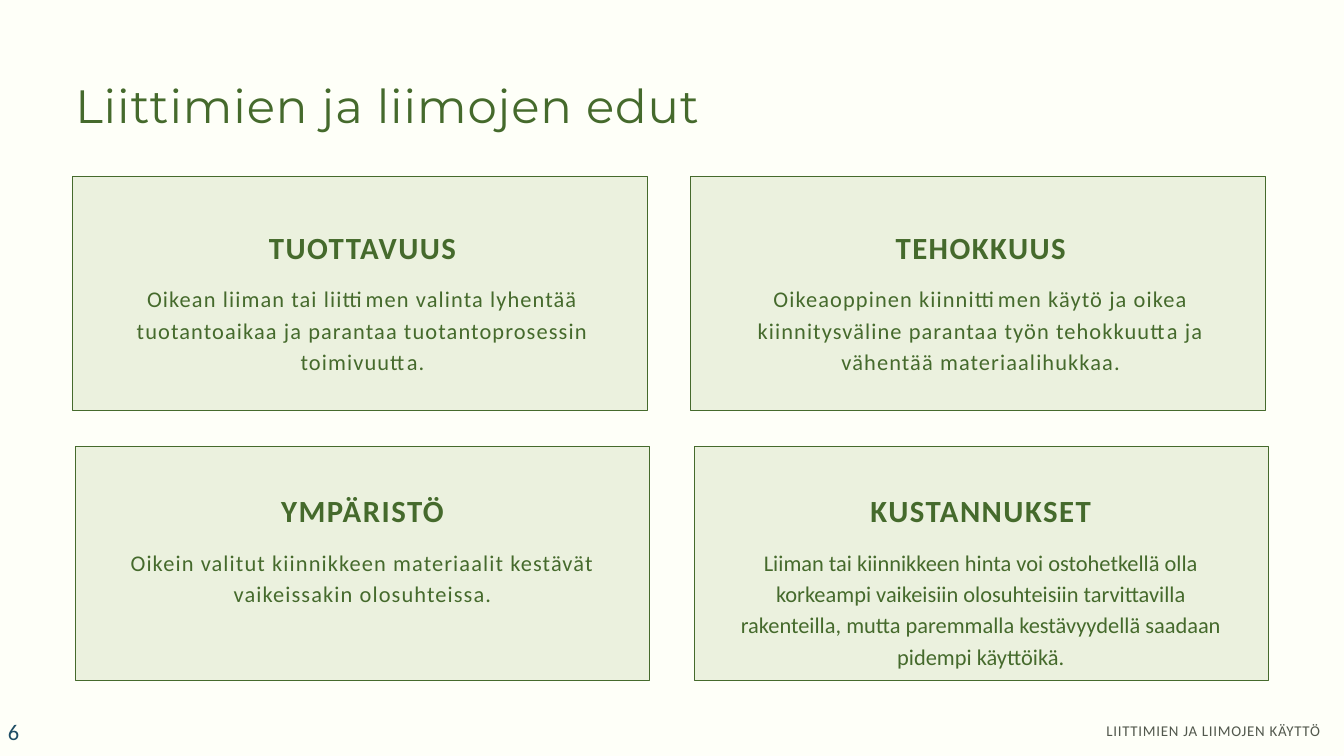
from pptx import Presentation
from pptx.dml.color import RGBColor
from pptx.enum.shapes import MSO_SHAPE
from pptx.enum.text import MSO_ANCHOR, MSO_AUTO_SIZE, PP_ALIGN
from pptx.util import Inches, Pt

LEFT, CENTER, RIGHT = PP_ALIGN.LEFT, PP_ALIGN.CENTER, PP_ALIGN.RIGHT
TOP, MIDDLE = MSO_ANCHOR.TOP, MSO_ANCHOR.MIDDLE
RECTANGLE = MSO_SHAPE.RECTANGLE
NO_AUTOFIT = MSO_AUTO_SIZE.NONE
TITLE_ONLY = 5
COLUMNS, ROWS = 200, 112.5

CARD_WIDTH, CARD_HEIGHT = 85.5, 34.8
TEXT_WIDTH = 73.9
TEXT_LEFT, TEXT_STEP = 17, 92
HEADING_HEIGHT, BODY_OFFSET, BODY_HEIGHT = 5.6, 8, 18.7

CARDS = [
    (0, 10.8, 26.2, 33.8, "TUOTTAVUUS", 1.2,
     "Oikean liiman tai liittimen valinta lyhentää tuotantoaikaa ja parantaa "
     "tuotantoprosessin toimivuutta."),
    (1, 102.8, 26.2, 33.8, "TEHOKKUUS", 1.2,
     "Oikeaoppinen kiinnittimen käytö ja oikea kiinnitysväline parantaa työn "
     "tehokkuutta ja vähentää materiaalihukkaa."),
    (0, 11.2, 66.4, 73, "YMPÄRISTÖ", 1.2,
     "Oikein valitut kiinnikkeen materiaalit kestävät vaikeissakin olosuhteissa."),
    (1, 103.3, 66.4, 73, "KUSTANNUKSET", 0,
     "Liiman tai kiinnikkeen hinta voi ostohetkellä olla korkeampi vaikeisiin "
     "olosuhteisiin tarvittavilla rakenteilla, mutta paremmalla kestävyydellä "
     "saadaan pidempi käyttöikä."),
]


def color(value):
    return RGBColor.from_string(value)


class SlideStyle:
    background = "FEFFF8"
    green = "456A2C"
    pale_green = "EBF1DE"
    gray = "52584D"
    blue = "1E4D65"
    body_font = "Calibri"
    title_font = "Montserrat"

    def __init__(self, deck):
        self.column = deck.slide_width / COLUMNS
        self.row = deck.slide_height / ROWS
        self.page = deck.slides.add_slide(deck.slide_layouts[TITLE_ONLY])
        fill = self.page.background.fill
        fill.solid()
        fill.fore_color.rgb = color(self.background)

    def area(self, left, top, width, height):
        return (round(left * self.column), round(top * self.row),
                round(width * self.column), round(height * self.row))

    def set_text(self, box, text, size, tint, font=None, align=LEFT, leading=None,
                 spacing=0, bold=False, anchor=TOP, margin=0):
        frame = box.text_frame
        frame.word_wrap = True
        frame.auto_size = NO_AUTOFIT
        frame.vertical_anchor = anchor
        frame.margin_left = frame.margin_right = Inches(margin)
        frame.margin_top = frame.margin_bottom = Inches(margin / 2)
        para = frame.paragraphs[0]
        para.text = text
        para.alignment = align
        if leading:
            para.line_spacing = Pt(leading)
        para.font.name = font or self.body_font
        para.font.size = Pt(size)
        para.font.bold = bold
        para.font.color.rgb = color(tint)
        for span in para.runs:
            span._r.get_or_add_rPr().set("spc", str(round(spacing * 100)))

    def title(self, text, *place):
        box = self.page.shapes.title
        box.left, box.top, box.width, box.height = self.area(*place)
        self.set_text(box, text, 50, self.green, self.title_font,
                      leading=66.8, spacing=1)

    def text(self, text, place, size, tint, parent=None, **options):
        shapes = (parent or self.page).shapes
        box = shapes.add_textbox(*self.area(*place))
        self.set_text(box, text, size, tint, **options)

    def panel(self, *place):
        shape = self.page.shapes.add_shape(RECTANGLE, *self.area(*place))
        shape.shadow.inherit = False
        shape.fill.solid()
        shape.fill.fore_color.rgb = color(self.pale_green)
        shape.line.color.rgb = color(self.green)
        shape.line.width = Pt(0.75)

    def card(self, side, left, top, heading_top, heading, spacing, body):
        self.panel(left, top, CARD_WIDTH, CARD_HEIGHT)
        group = self.page.shapes.add_group_shape()
        text_left = TEXT_LEFT + side * TEXT_STEP
        self.text(heading, (text_left, heading_top, TEXT_WIDTH, HEADING_HEIGHT),
                  33, self.green, group, align=CENTER, leading=41.2,
                  spacing=1.6, bold=True)
        self.text(body, (text_left, heading_top + BODY_OFFSET, TEXT_WIDTH, BODY_HEIGHT),
                  24, self.green, group, align=CENTER, leading=33.6, spacing=spacing)


def main():
    deck = Presentation()
    deck.slide_width, deck.slide_height = Inches(20), Inches(11.25)
    slide = SlideStyle(deck)
    slide.title("Liittimien ja liimojen edut", 11.2, 10.5, 177.1, 8.9)
    for card in CARDS:
        slide.card(*card)
    slide.text("LIITTIMIEN JA LIIMOJEN KÄYTTÖ", (113.3, 107, 83.2, 2.9), 16,
               slide.gray, align=RIGHT, leading=22.4, spacing=0.8)
    slide.text("6", (0.2, 106.9, 23.3, 4), 24, slide.blue,
               spacing=1.2, anchor=MIDDLE, margin=0.1)
    deck.save("out.pptx")


if __name__ == "__main__":
    main()
